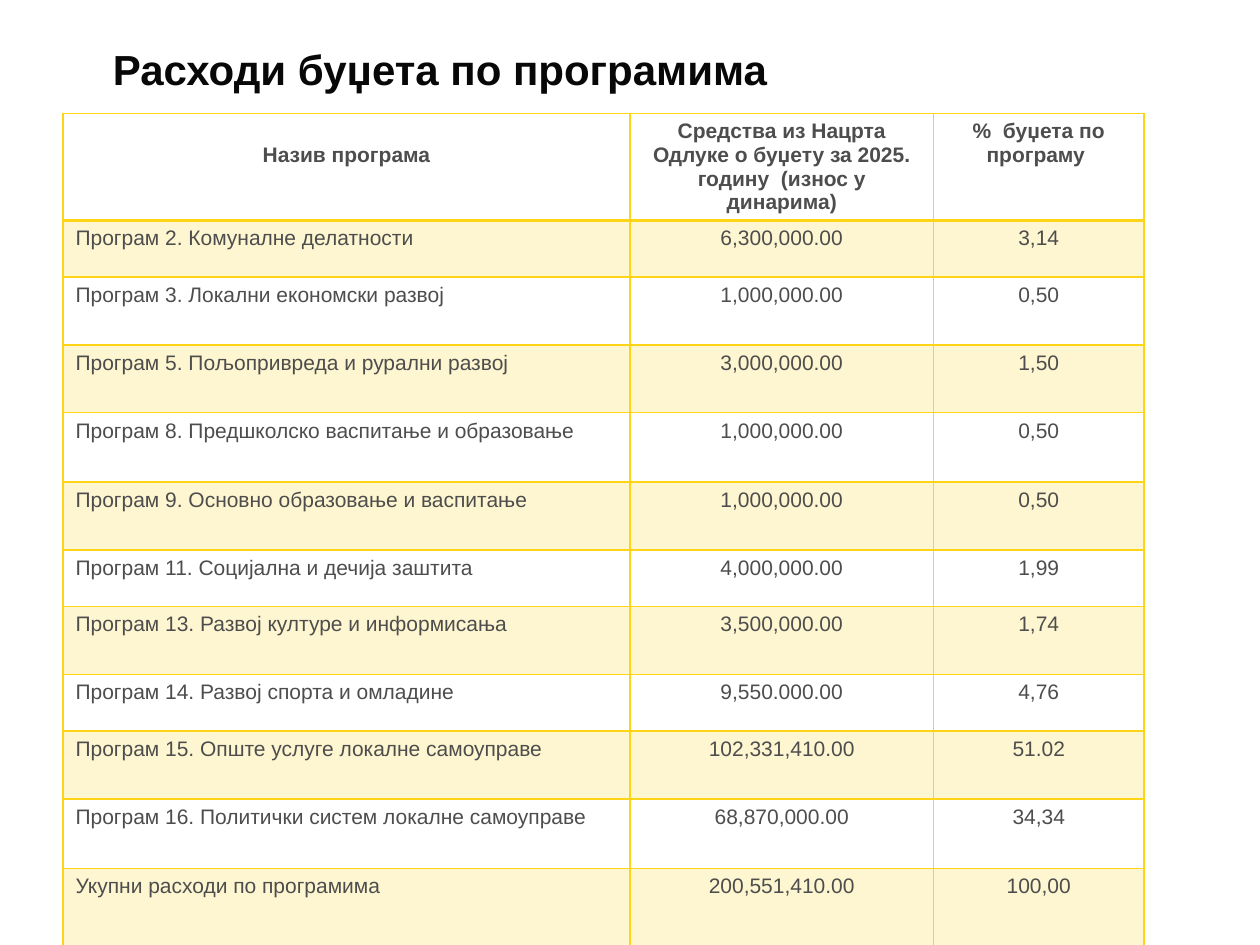
from lxml import etree
from pptx import Presentation
from pptx import util as u
from pptx.dml.color import RGBColor
from pptx.enum import text
from pptx.oxml import ns

GOLD = RGBColor(0xFE, 0xD4, 0x16)
GREY = RGBColor(0x4D, 0x4D, 0x4D)
BLACK = RGBColor(0x08, 0x08, 0x08)
FONT = "Arial"

COLUMN_WIDTHS = [11.43, 6.12, 4.24]
HEADER_HEIGHT = 1.24
HEADER = [
    "Назив програма",
    "Средства из Нацрта Одлуке о буџету за 2025. годину  (износ у динарима)",
    "%  буџета по програму ",
]
PROGRAMS = [
    ("Програм 2. Комуналне делатности", "6,300,000.00", "3,14", 1.14),
    ("Програм 3. Локални економски развој", "1,000,000.00", "0,50", 1.37),
    ("Програм 5. Пољопривреда и рурални развој", "3,000,000.00", "1,50", 1.37),
    ("Програм 8. Предшколско васпитање и образовање", "1,000,000.00", "0,50", 1.4),
    ("Програм 9. Основно образовање и васпитање", "1,000,000.00", "0,50", 1.37),
    ("Програм 11. Социјална и дечија заштита", "4,000,000.00", "1,99", 1.14),
    ("Програм 13. Развој културе и информисања", "3,500,000.00", "1,74", 1.37),
    ("Програм 14. Развој спорта и омладине", "9,550.000.00", "4,76", 1.14),
    ("Програм 15. Опште услуге локалне самоуправе", "102,331,410.00", "51.02", 1.37),
    ("Програм 16. Политички систем локалне самоуправе", "68,870,000.00", "34,34", 1.4),
    ("Укупни расходи по програмима", "200,551,410.00", "100,00", 1.78),
]


def write(tf, words, size, color, bold, align):
    tf.text = words
    p = tf.paragraphs[0]
    p.alignment = align
    font = p.runs[0].font
    font.name = FONT
    font.size = u.Pt(size)
    font.bold = bold
    font.color.rgb = color


def add_title(s, words):
    sp = s.shapes.title
    sp.left, sp.top = u.Cm(-5.92), u.Cm(0.43)
    sp.width, sp.height = u.Cm(21.64), u.Cm(1.9)
    tf = sp.text_frame
    tf.vertical_anchor = text.MSO_ANCHOR.MIDDLE
    write(tf, words, 24, BLACK, True, text.PP_ALIGN.RIGHT)


def set_fill(cell, shaded):
    if not shaded:
        cell.fill.background()
        return
    cell.fill.solid()
    cell.fill.fore_color.rgb = GOLD
    color = cell._tc.tcPr.find(".//" + ns.qn("a:srgbClr"))
    etree.SubElement(color, ns.qn("a:alpha"), val="20000")


def set_borders(cell, top, bottom):
    tcPr = cell._tc.get_or_add_tcPr()
    widths = {"a:lnL": 1, "a:lnR": 1, "a:lnT": top, "a:lnB": bottom}
    for i, (side, width) in enumerate(widths.items()):
        ln = etree.Element(ns.qn(side), w=str(u.Pt(width)))
        fill = etree.SubElement(ln, ns.qn("a:solidFill"))
        etree.SubElement(fill, ns.qn("a:srgbClr"), val=str(GOLD))
        tcPr.insert(i, ln)


def add_program_table(s):
    rows = [(*HEADER, HEADER_HEIGHT)] + PROGRAMS
    sp = s.shapes.add_table(len(rows), len(COLUMN_WIDTHS), u.Cm(1.27), u.Cm(2.29),
                            u.Cm(sum(COLUMN_WIDTHS)), u.Cm(17.15))
    table = sp.table
    for column, width in zip(table.columns, COLUMN_WIDTHS):
        column.width = u.Cm(width)
    for i, (*words, height) in enumerate(rows):
        table.rows[i].height = u.Cm(height)
        for j, value in enumerate(words):
            cell = table.cell(i, j)
            centred = i == 0 or j > 0
            align = text.PP_ALIGN.CENTER if centred else text.PP_ALIGN.LEFT
            write(cell.text_frame, value, 12, GREY, i == 0, align)
            set_fill(cell, i % 2 == 1)
            set_borders(cell, 2 if i == 1 else 1, 2 if i == 0 else 1)
    table.cell(0, 0).margin_top = u.Cm(0.6)
    sp.height = u.Cm(17.15)


def main():
    prs = Presentation()
    prs.slide_width, prs.slide_height = u.Cm(25.4), u.Cm(19.05)
    s = prs.slides.add_slide(prs.slide_layouts[5])
    add_title(s, "Расходи буџета по програмима")
    add_program_table(s)
    prs.save("out.pptx")


if __name__ == "__main__":
    main()
